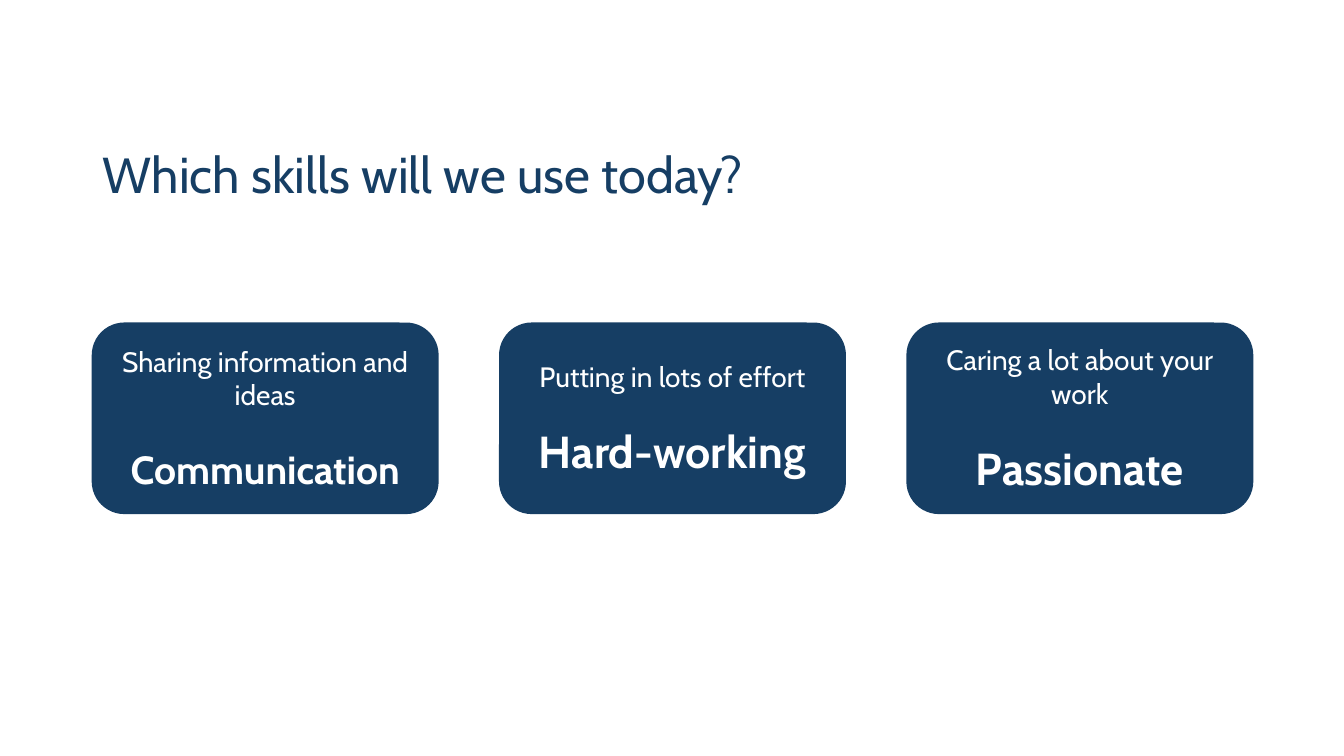
from pptx import Presentation
from pptx.dml.color import RGBColor
from pptx.enum.shapes import MSO_SHAPE as Shape
from pptx.enum.text import MSO_ANCHOR as Anchor, PP_ALIGN as Align
from pptx.util import Pt

PX = 9144
NAVY, WHITE = "163E64", "FFFFFF"
CARDS = [
    ("Sharing information and ideas", "Communication", 28, 24),
    ("Putting in lots of effort", "Hard-working", 32, 22),
    ("Caring a lot about your work", "Passionate", 32, 22),
]


def color(hex):
    return RGBColor.from_string(hex)


def scale(box):
    """Turn a box in px into EMU."""
    return [n * PX for n in box]


def write(para, text, size, hue, bold=False):
    run = para.add_run()
    run.text = text
    font = run.font
    font.name, font.size, font.bold = "Cabin", Pt(size), bold
    font.color.rgb = color(hue)


def add_title(slide, box, text):
    title = slide.shapes.title
    title.left, title.top, title.width, title.height = scale(box)
    frame = title.text_frame
    frame.word_wrap = True
    frame.vertical_anchor = Anchor.MIDDLE
    para = frame.paragraphs[0]
    para.alignment = Align.LEFT
    para.line_spacing = 0.9
    write(para, text, 36, NAVY)


def add_card(slide, box, text, skill, size, gap):
    card = slide.shapes.add_shape(Shape.ROUNDED_RECTANGLE, *scale(box))
    card.shadow.inherit = False
    card.fill.solid()
    card.fill.fore_color.rgb = color(NAVY)
    card.line.color.rgb = color(NAVY)
    card.line.width = Pt(1.5)
    frame = card.text_frame
    frame.word_wrap = True
    frame.vertical_anchor = Anchor.MIDDLE
    head, name = frame.paragraphs[0], frame.add_paragraph()
    head.alignment = name.alignment = Align.CENTER
    name.space_before = Pt(gap)
    write(head, text, 20, WHITE)
    write(name, skill, size, WHITE, bold=True)


def add_row(slide, box, cards, wide):
    """Spread the cards evenly across the box."""
    left, top, width, height = box
    step = (width - wide) // (len(cards) - 1)
    for i, card in enumerate(cards):
        add_card(slide, (left + i * step, top, wide, height), *card)


def main():
    deck = Presentation()
    deck.slide_width, deck.slide_height = scale((1333, 750))
    slide = deck.slides.add_slide(deck.slide_layouts[5])
    add_title(slide, (92, 130, 1150, 92), "Which skills will we use today?")
    add_row(slide, (92, 321, 1150, 188), CARDS, 342)
    deck.save("out.pptx")


if __name__ == "__main__":
    main()
